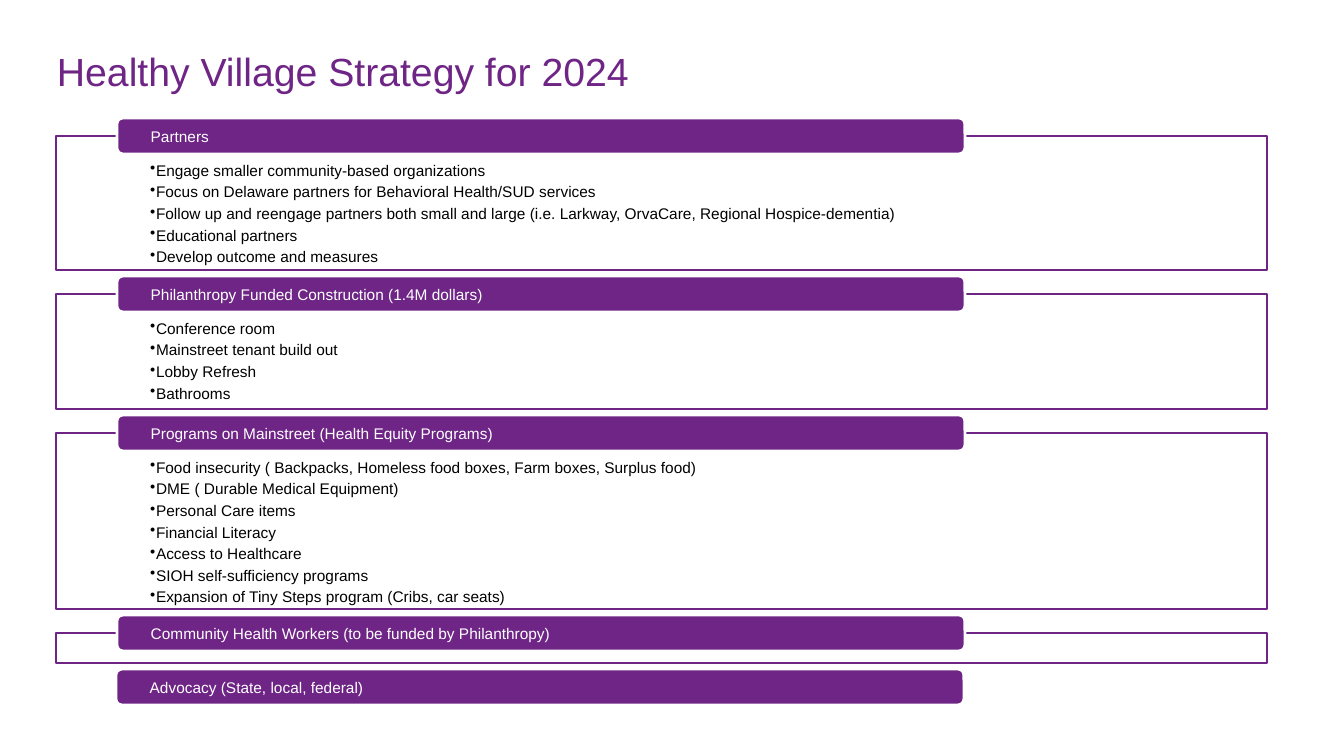
from dataclasses import dataclass

from lxml.etree import SubElement
from pptx import Presentation
from pptx.dml.color import RGBColor
from pptx.enum.shapes import MSO_SHAPE
from pptx.enum.text import MSO_ANCHOR, PP_ALIGN
from pptx.oxml.ns import qn
from pptx.util import Emu, Pt

EMU_PER_PX = 914400 / 100.8


@dataclass(frozen=True)
class Theme:
    purple: RGBColor = RGBColor(0x6E, 0x25, 0x85)
    white: RGBColor = RGBColor(0xFF, 0xFF, 0xFF)
    black: RGBColor = RGBColor(0, 0, 0)
    font: str = "Arial"
    title_size: int = 28
    body_size: int = 11
    line_width: int = 2


THEME = Theme()

SECTIONS = [
    ("Partners", 134, [
        "Engage smaller community-based organizations",
        "Focus on Delaware partners for Behavioral Health/SUD services",
        "Follow up and reengage partners both small and large "
        "(i.e. Larkway, OrvaCare, Regional Hospice-dementia)",
        "Educational partners",
        "Develop outcome and measures",
    ]),
    ("Philanthropy Funded Construction (1.4M dollars)", 115, [
        "Conference room",
        "Mainstreet tenant build out",
        "Lobby Refresh",
        "Bathrooms",
    ]),
    ("Programs on Mainstreet (Health Equity Programs)", 176, [
        "Food insecurity ( Backpacks, Homeless food boxes, Farm boxes, Surplus food)",
        "DME ( Durable Medical Equipment)",
        "Personal Care items",
        "Financial Literacy",
        "Access to Healthcare",
        "SIOH self-sufficiency programs",
        "Expansion of Tiny Steps program (Cribs, car seats)",
    ]),
    ("Community Health Workers (to be funded by Philanthropy)", 30, []),
]
FIRST_PANEL_TOP = 136
PANEL_GAP = 24
TAB_RISE = 18


def px(length):
    return Emu(round(length * EMU_PER_PX))


def add_bullet(paragraph):
    properties = paragraph._p.get_or_add_pPr()
    properties.set("marL", str(px(6)))
    properties.set("indent", str(-px(6)))
    SubElement(properties, qn("a:buChar")).set("char", "•")


def write_text(shape, lines, color, size=THEME.body_size, insets=(0, 0, 0, 0),
               anchor=MSO_ANCHOR.MIDDLE, bullets=False, after=0, spacing=1.0):
    frame = shape.text_frame
    frame.word_wrap = True
    frame.vertical_anchor = anchor
    (frame.margin_left, frame.margin_top,
     frame.margin_right, frame.margin_bottom) = map(px, insets)
    for index, line in enumerate(lines):
        paragraph = frame.add_paragraph() if index else frame.paragraphs[0]
        if bullets:
            add_bullet(paragraph)
        paragraph.alignment = PP_ALIGN.LEFT
        paragraph.line_spacing = spacing
        paragraph.space_after = Pt(after)
        paragraph.text = line
        paragraph.font.name = THEME.font
        paragraph.font.size = Pt(size)
        paragraph.font.color.rgb = color


def add_box(slide, preset, bounds, fill, outline):
    box = slide.shapes.add_shape(preset, *map(px, bounds))
    box.shadow.inherit = False
    box.fill.solid()
    box.fill.fore_color.rgb = fill
    box.line.color.rgb = outline
    box.line.width = Pt(THEME.line_width)
    return box


def add_title(slide, text):
    title = slide.shapes.add_textbox(*map(px, (57, 39, 1210, 74)))
    write_text(title, [text], THEME.purple, size=THEME.title_size,
               insets=(0, 0, 10, 5), spacing=0.9)


def add_panel(slide, top, height, items):
    panel = add_box(slide, MSO_SHAPE.RECTANGLE, (56, top, 1211, height),
                    THEME.white, THEME.purple)
    white = panel._element.spPr.find(qn("a:solidFill"))[0]
    SubElement(white, qn("a:alpha")).set("val", "90000")
    if items:
        write_text(panel, items, THEME.black, insets=(94, 25, 94, 9),
                   anchor=MSO_ANCHOR.TOP, bullets=True, after=2.2)


def add_tab(slide, left, top, heading):
    tab = add_box(slide, MSO_SHAPE.ROUNDED_RECTANGLE, (left, top, 848, 36),
                  THEME.purple, THEME.white)
    write_text(tab, [heading], THEME.white, insets=(32, 0, 32, 0))


def main():
    presentation = Presentation()
    presentation.slide_width = px(1344)
    presentation.slide_height = px(756)
    slide = presentation.slides.add_slide(presentation.slide_layouts[6])
    add_title(slide, "Healthy Village Strategy for 2024")
    top = FIRST_PANEL_TOP
    for heading, height, items in SECTIONS:
        add_panel(slide, top, height, items)
        add_tab(slide, 117, top - TAB_RISE, heading)
        top += height + PANEL_GAP
    add_tab(slide, 116, top - TAB_RISE, "Advocacy (State, local, federal)")
    presentation.save("out.pptx")


if __name__ == "__main__":
    main()
